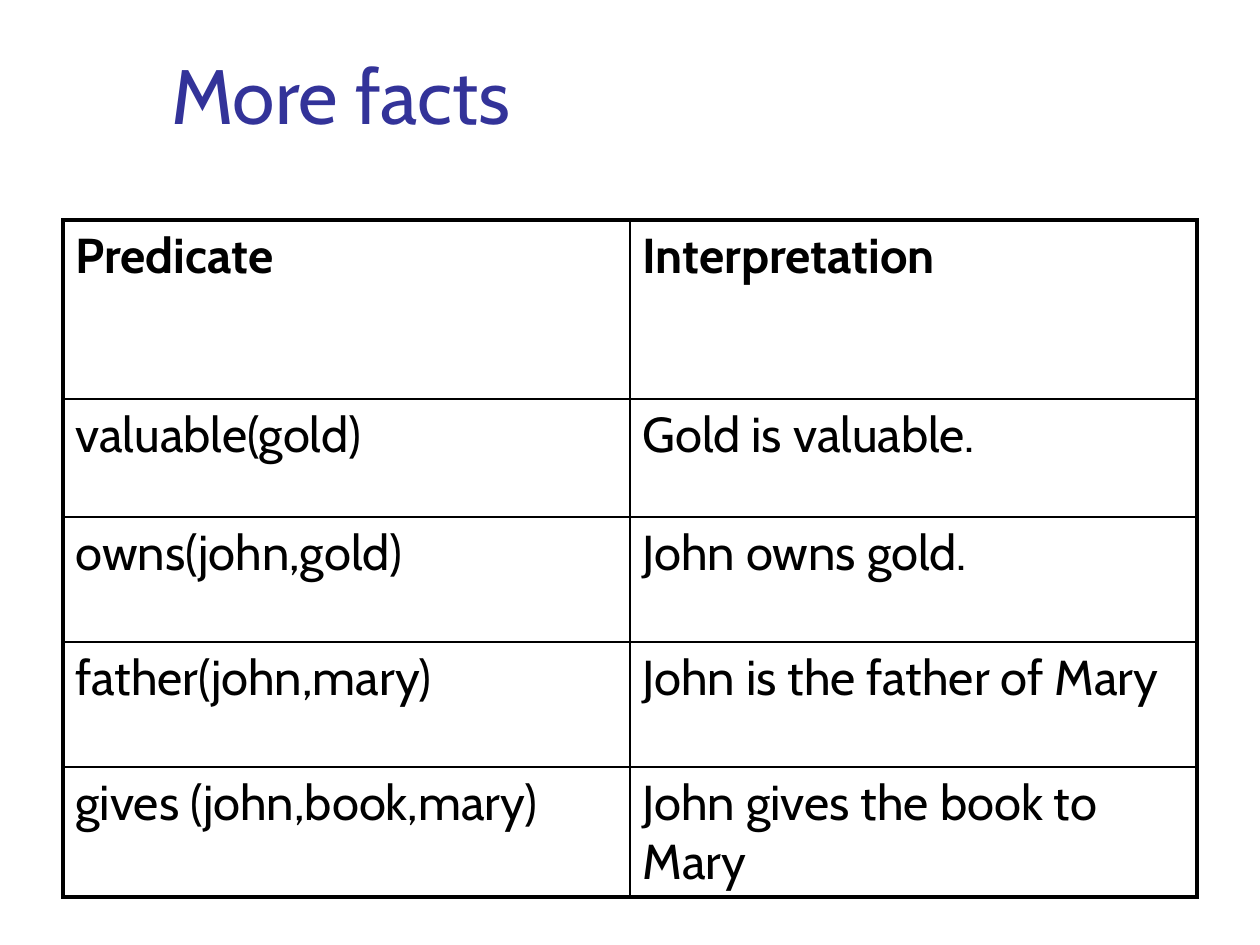
import dataclasses

import pptx
import pptx.dml.color
import pptx.enum.text
import pptx.oxml
import pptx.oxml.ns
import pptx.util

PX = 914400 // 126
FONT = "Cabin"
COLORS = {"title": "333399", "ink": "000000"}
THIN, THICK = 1, 2.25


@dataclasses.dataclass
class Fact:
    pred: str
    sense: str
    height: int
    bold: bool = False


FACTS = [
    Fact("Predicate", "Interpretation", 179, True),
    Fact("valuable(gold)", "Gold is valuable.", 118),
    Fact("owns(john,gold)", "John owns gold.", 125),
    Fact("father(john,mary)", "John is the father of Mary", 125),
    Fact("gives (john,book,mary)", "John gives the book to Mary", 125),
]


def px(n: int) -> int:
    return pptx.util.Emu(n * PX)


def write(frame, text: str, size: int, color: str, bold: bool = False) -> None:
    run = frame.paragraphs[0].add_run()
    run.text = text
    look = {"name": FONT, "size": pptx.util.Pt(size), "bold": bold}
    for key, value in look.items():
        setattr(run.font, key, value)
    run.font.color.rgb = pptx.dml.color.RGBColor.from_string(COLORS[color])


def edge(cell, side: str, width: float) -> None:
    ns = pptx.oxml.ns.nsdecls("a")
    line = pptx.oxml.parse_xml(
        f'<a:ln{side} {ns} w="{pptx.util.Pt(width)}"><a:solidFill>'
        f'<a:srgbClr val="{COLORS["ink"]}"/></a:solidFill></a:ln{side}>')
    cell._tc.get_or_add_tcPr().append(line)


def draw_title(slide, text: str) -> None:
    box = slide.shapes.add_textbox(px(159), px(29), px(1074), px(117))
    frame = box.text_frame
    look = {"word_wrap": True,
            "vertical_anchor": pptx.enum.text.MSO_ANCHOR.BOTTOM}
    for key, value in look.items():
        setattr(frame, key, value)
    write(frame, text, 44, "title")


def draw_table(slide, facts: list[Fact]) -> None:
    total = sum(fact.height for fact in facts)
    table = slide.shapes.add_table(
        len(facts), 2, px(63), px(220), px(1134), px(total)).table
    for key in ("first_row", "horz_banding"):
        setattr(table, key, False)
    last = len(facts) - 1
    for r, fact in enumerate(facts):
        table.rows[r].height = px(fact.height)
        for c, text in enumerate((fact.pred, fact.sense)):
            cell = table.cell(r, c)
            write(cell.text_frame, text, 28, "ink", fact.bold)
            # The outer frame is thick, the inner grid thin
            outer = {"L": c == 0, "R": c == 1, "T": r == 0, "B": r == last}
            for side, thick in outer.items():
                edge(cell, side, THICK if thick else THIN)
            cell.fill.background()


def main() -> None:
    deck = pptx.Presentation()
    deck.slide_width, deck.slide_height = px(1260), px(945)
    slide = deck.slides.add_slide(deck.slide_layouts[6])
    # Title
    draw_title(slide, "More facts")
    # Facts and their meaning
    draw_table(slide, FACTS)
    deck.save("out.pptx")


if __name__ == "__main__":
    main()
